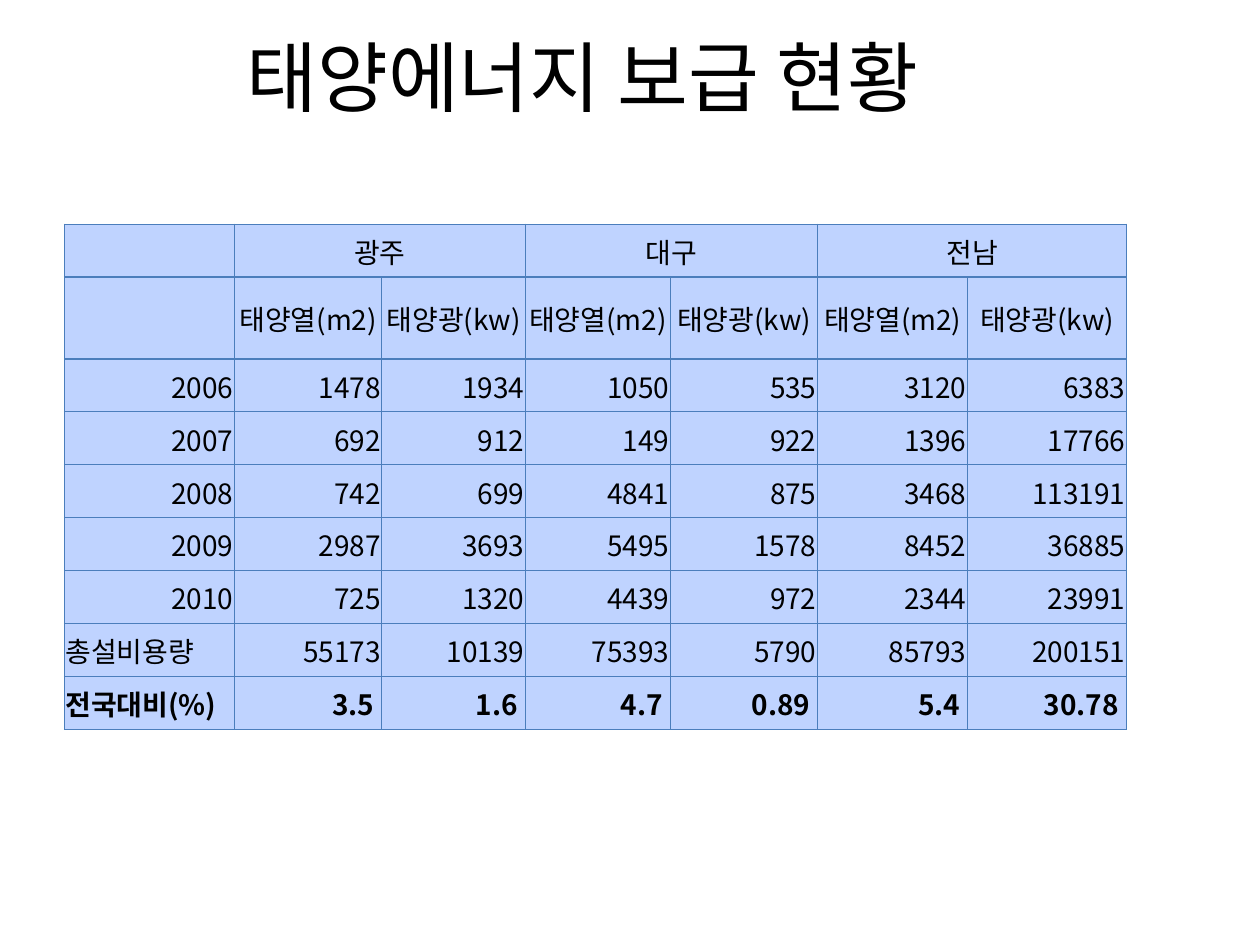
from lxml.etree import SubElement
from pptx import Presentation
from pptx.dml.color import RGBColor
from pptx.enum.text import MSO_ANCHOR, PP_ALIGN
from pptx.oxml.ns import qn
from pptx.util import Pt

FONT = "Noto Sans CJK KR"
COLORS = {"text": "000000", "cell": "BFD3FF", "border": "4B7EBC"}
COLUMN_WIDTHS = [97.2, 84.24, 82.08, 82.8, 84.24, 85.68, 90.72]
ROW_HEIGHT = 30.24
HEADER_ROWS = 2
ROWS = [
    ["", "광주", "", "대구", "", "전남", ""],
    [""] + ["태양열(m2)", "태양광(kw)"] * 3,
    ["2006", "1478", "1934", "1050", "535", "3120", "6383"],
    ["2007", "692", "912", "149", "922", "1396", "17766"],
    ["2008", "742", "699", "4841", "875", "3468", "113191"],
    ["2009", "2987", "3693", "5495", "1578", "8452", "36885"],
    ["2010", "725", "1320", "4439", "972", "2344", "23991"],
    ["총설비용량", "55173", "10139", "75393", "5790", "85793", "200151"],
    ["전국대비(%)", "3.5 ", "1.6 ", "4.7 ", "0.89 ", "5.4 ", "30.78 "],
]


def set_attributes(target, values):
    for name, value in values.items():
        setattr(target, name, value)


def write_text(frame, text, size, alignment, bold=False):
    paragraph = frame.paragraphs[0]
    paragraph.alignment = alignment
    if not text:
        paragraph.font.size = Pt(size)
        return
    run = paragraph.add_run()
    run.text = text
    set_attributes(run.font, {"name": FONT, "size": Pt(size), "bold": bold})
    run.font.color.rgb = RGBColor.from_string(COLORS["text"])
    # Korean letters take the East Asian font
    SubElement(run.font._element, qn("a:ea"), typeface=FONT)


def add_title(slide, text):
    title = slide.shapes.title
    set_attributes(title, {"left": Pt(36), "top": Pt(9.4),
                           "width": Pt(594), "height": Pt(67.7)})
    title.text_frame.vertical_anchor = MSO_ANCHOR.MIDDLE
    write_text(title.text_frame, text, 44, PP_ALIGN.CENTER)


def add_borders(cell):
    properties = cell._tc.get_or_add_tcPr()
    for side in ("lnL", "lnR", "lnT", "lnB"):
        line = SubElement(properties, qn(f"a:{side}"), w=str(Pt(0.75)))
        fill = SubElement(line, qn("a:solidFill"))
        SubElement(fill, qn("a:srgbClr"), val=COLORS["border"])


def format_cell(cell):
    add_borders(cell)
    cell.fill.solid()
    cell.fill.fore_color.rgb = RGBColor.from_string(COLORS["cell"])
    set_attributes(cell, {
        "margin_left": Pt(0.75), "margin_right": Pt(0.75),
        "margin_top": Pt(0.75), "margin_bottom": Pt(0),
        "vertical_anchor": MSO_ANCHOR.MIDDLE})


def cell_alignment(row, text):
    if row < HEADER_ROWS:
        return PP_ALIGN.CENTER
    return PP_ALIGN.RIGHT if text[0].isdigit() else PP_ALIGN.LEFT


def add_energy_table(slide):
    table = slide.shapes.add_table(
        len(ROWS), len(COLUMN_WIDTHS), Pt(36.8), Pt(128.1),
        Pt(sum(COLUMN_WIDTHS)), Pt(ROW_HEIGHT * len(ROWS))).table
    set_attributes(table, {"first_row": False, "horz_banding": False})
    for column, width in zip(table.columns, COLUMN_WIDTHS):
        column.width = Pt(width)
    for row, texts in enumerate(ROWS):
        table.rows[row].height = Pt(ROW_HEIGHT)
        for column, text in enumerate(texts):
            cell = table.cell(row, column)
            format_cell(cell)
            write_text(cell.text_frame, text, 16, cell_alignment(row, text),
                       bold=row == len(ROWS) - 1)
    for column in range(1, len(COLUMN_WIDTHS), 2):
        table.cell(0, column).merge(table.cell(0, column + 1))


def main():
    presentation = Presentation()
    set_attributes(presentation, {"slide_width": Pt(720),
                                  "slide_height": Pt(540)})
    slide = presentation.slides.add_slide(presentation.slide_layouts[5])
    add_title(slide, "태양에너지 보급 현황")
    add_energy_table(slide)
    presentation.save("out.pptx")


if __name__ == "__main__":
    main()
